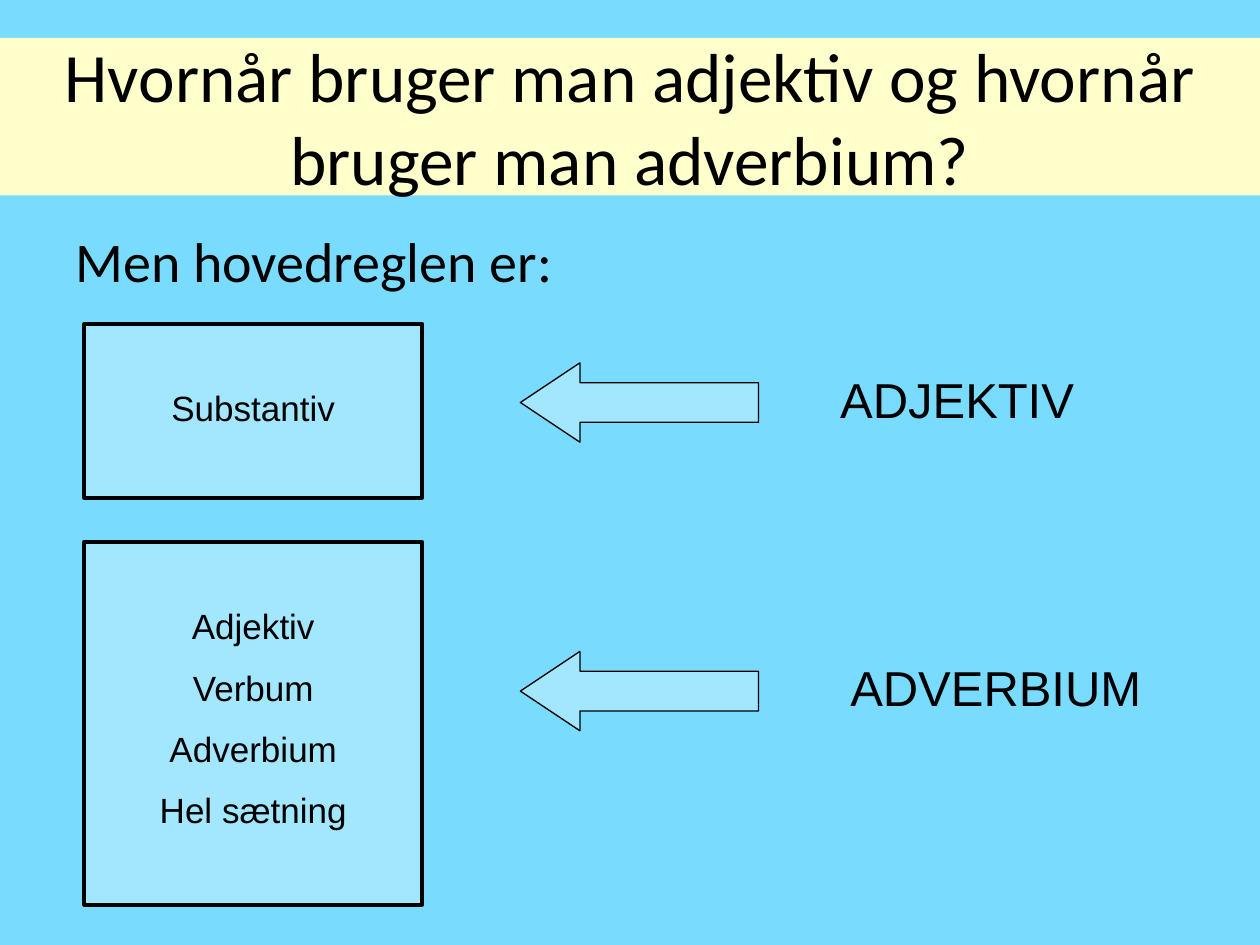
from dataclasses import dataclass

from pptx import Presentation
from pptx.dml.color import RGBColor
from pptx.enum.shapes import MSO_SHAPE as Kind
from pptx.enum.text import MSO_ANCHOR as Anchor, MSO_AUTO_SIZE as Fit, PP_ALIGN as Align
from pptx.shapes.autoshape import Shape
from pptx.slide import Slide
from pptx.util import Inches, Pt

SKY = RGBColor(0x79, 0xDC, 0xFF)
PALE = RGBColor(0xA3, 0xE7, 0xFF)
CREAM = RGBColor(0xFF, 0xFF, 0xCC)
BLACK = RGBColor(0, 0, 0)


@dataclass
class Rule:
    words: list[str]
    top: float
    height: float
    arrow: float
    label: str
    left: float
    width: float


RULES = [
    Rule(["Substantiv"], 2.57, 1.38, 2.88, "ADJEKTIV", 6.57, 2.44),
    Rule(["Adjektiv", "Verbum", "Adverbium", "Hel sætning"],
         4.3, 2.88, 5.17, "ADVERBIUM", 6.65, 2.6),
]


def write(shape: Shape, lines: list[str], size: float, font: str,
          align: Align = Align.LEFT, anchor: Anchor = Anchor.TOP) -> None:
    frame = shape.text_frame
    frame.word_wrap = True
    frame.auto_size = Fit.NONE
    frame.vertical_anchor = anchor
    for i, line in enumerate(lines):
        para = frame.paragraphs[0] if i == 0 else frame.add_paragraph()
        para.alignment = align
        if i:
            para.space_before = Pt(11)
        run = para.add_run()
        run.text = line
        run.font.size = Pt(size)
        run.font.name = font
        run.font.color.rgb = BLACK


def place(shape: Shape, left: float, top: float, width: float, height: float) -> None:
    shape.left, shape.top = Inches(left), Inches(top)
    shape.width, shape.height = Inches(width), Inches(height)


def add_text(slide: Slide, text: str, left: float, top: float, width: float,
             height: float, size: float, font: str) -> None:
    box = slide.shapes.add_textbox(
        Inches(left), Inches(top), Inches(width), Inches(height))
    write(box, [text], size, font)


def add_form(slide: Slide, kind: Kind, left: float, top: float, width: float,
             height: float, line: float) -> Shape:
    form = slide.shapes.add_shape(
        kind, Inches(left), Inches(top), Inches(width), Inches(height))
    form.shadow.inherit = False
    form.fill.solid()
    form.fill.fore_color.rgb = PALE
    form.line.color.rgb = BLACK
    form.line.width = Pt(line)
    return form


def add_rule(slide: Slide, rule: Rule) -> None:
    box = add_form(slide, Kind.RECTANGLE, 0.67, rule.top, 2.68, rule.height, 2.25)
    box.text_frame.margin_top = Inches(0.5)
    write(box, rule.words, 20, "Arial", Align.CENTER)
    arrow = add_form(slide, Kind.LEFT_ARROW, 4.13, rule.arrow, 1.89, 0.63, 0.75)
    arrow.adjustments[0] = 0.5
    arrow.adjustments[1] = 0.75
    add_text(slide, rule.label, rule.left, rule.arrow, rule.width, 0.57, 28, "Arial")


def main() -> None:
    deck = Presentation()
    deck.slide_width, deck.slide_height = Inches(10), Inches(7.5)
    slide = deck.slides.add_slide(deck.slide_layouts[5])
    slide.background.fill.solid()
    slide.background.fill.fore_color.rgb = SKY

    title = slide.shapes.title
    place(title, 0, 0.3, 10, 1.25)
    title.fill.solid()
    title.fill.fore_color.rgb = CREAM
    write(title, ["Hvornår bruger man adjektiv og hvornår bruger man adverbium?"],
          39.6, "Calibri", Align.CENTER, Anchor.MIDDLE)

    add_text(slide, "Men hovedreglen er:", 0.5, 1.75, 9, 0.58, 32, "Calibri")
    for rule in RULES:
        add_rule(slide, rule)
    deck.save("out.pptx")


if __name__ == "__main__":
    main()
